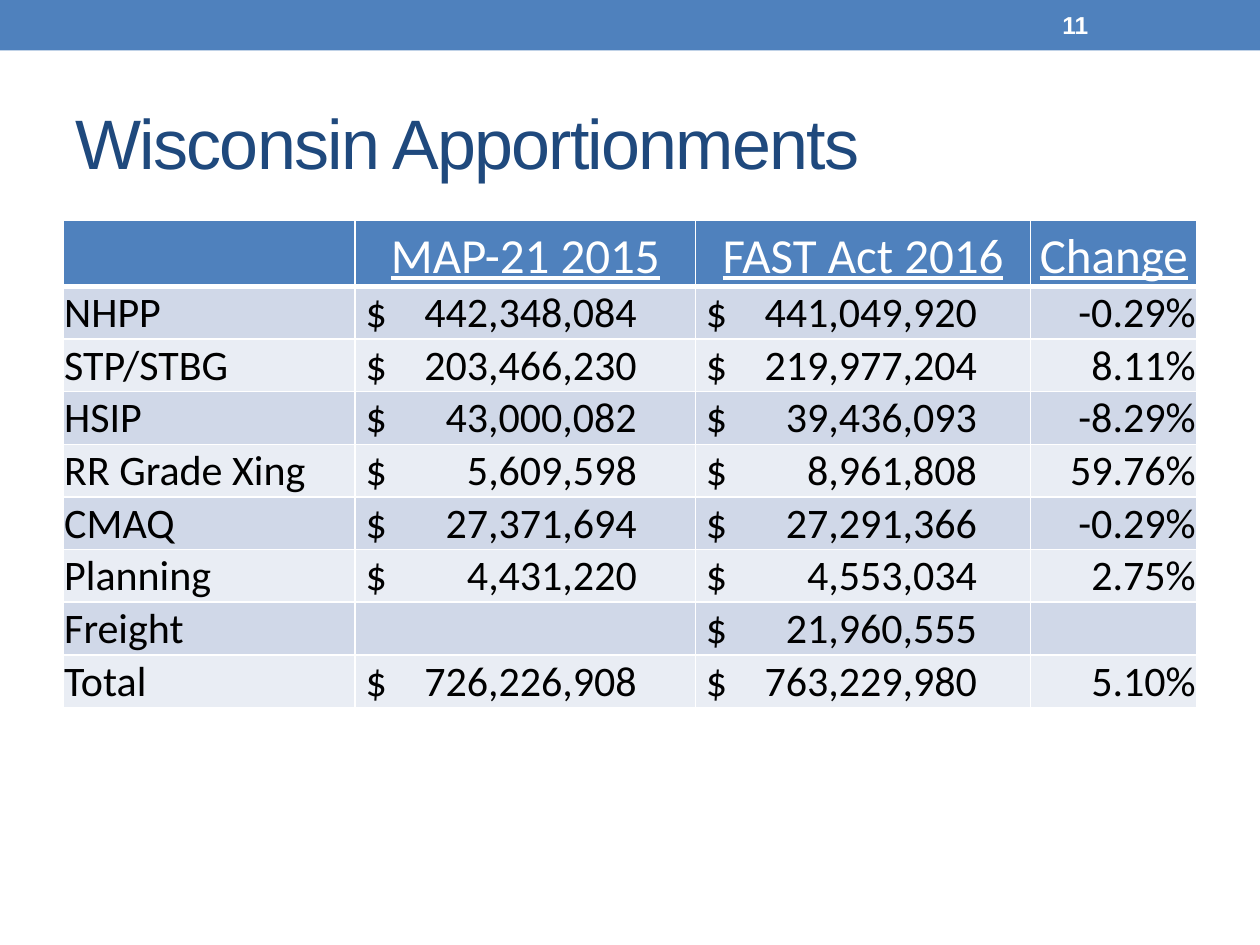
from lxml.etree import SubElement
from pptx import Presentation
from pptx.dml.color import RGBColor
from pptx.enum.shapes import MSO_SHAPE
from pptx.enum.text import MSO_ANCHOR, PP_ALIGN
from pptx.oxml.ns import qn
from pptx.util import Pt

BLUE = RGBColor(0x4F, 0x81, 0xBD)
NAVY = RGBColor(0x1F, 0x49, 0x7D)
WHITE = RGBColor(0xFF, 0xFF, 0xFF)
BLACK = RGBColor(0, 0, 0)
BANDS = [RGBColor(0xE9, 0xED, 0xF4), RGBColor(0xD0, 0xD8, 0xE8)]

HEADINGS = ["", "MAP-21 2015", "FAST Act 2016", "Change"]
PROGRAMS = [
    ["NHPP", "442,348,084", "441,049,920", "-0.29%"],
    ["STP/STBG", "203,466,230", "219,977,204", "8.11%"],
    ["HSIP", "43,000,082", "39,436,093", "-8.29%"],
    ["RR Grade Xing", "5,609,598", "8,961,808", "59.76%"],
    ["CMAQ", "27,371,694", "27,291,366", "-0.29%"],
    ["Planning", "4,431,220", "4,553,034", "2.75%"],
    ["Freight", "", "21,960,555", ""],
    ["Total", "726,226,908", "763,229,980", "5.10%"],
]
COLUMN_WIDTHS = [167, 194.4, 191.6, 95]
HEADER_HEIGHT, ROW_HEIGHT = 37.7, 30.1
AMOUNT_INDENT, AMOUNT_TAB = 6, 155


def style_font(font, name, size, color, bold=False):
    font.name, font.size, font.bold = name, Pt(size), bold
    font.color.rgb = color


def add_label(slide, text, left, top, width, height):
    frame = slide.shapes.add_textbox(Pt(left), Pt(top), Pt(width), Pt(height)).text_frame
    frame.word_wrap = True
    frame.vertical_anchor = MSO_ANCHOR.MIDDLE
    paragraph = frame.paragraphs[0]
    paragraph.text = text
    return paragraph


def add_banner(slide, left, top, width, height):
    band = slide.shapes.add_shape(MSO_SHAPE.RECTANGLE, Pt(left), Pt(top), Pt(width), Pt(height))
    band.shadow.inherit = False
    band.fill.solid()
    band.fill.fore_color.rgb = BLUE
    band.line.fill.background()
    page_number = add_label(slide, "11", left + width - 120, top + 1.4, 84, height - 2.8)
    style_font(page_number.font, "Arial", 14, WHITE, True)


def add_title(slide, left, top, width, height):
    title = add_label(slide, "Wisconsin Apportionments", left, top, width, height)
    style_font(title.font, "Arial", 40, NAVY)
    title.runs[0].font.size = Pt(40)
    title.runs[0]._r.get_or_add_rPr().set("spc", "-100")


def add_borders(cell, row):
    properties = cell._tc.get_or_add_tcPr()
    for side in ("lnL", "lnR", "lnT", "lnB"):
        under_header = (row, side) in ((0, "lnB"), (1, "lnT"))
        width = Pt(3 if under_header else 1)
        border = SubElement(properties, qn(f"a:{side}"), w=str(width))
        fill = SubElement(border, qn("a:solidFill"))
        SubElement(fill, qn("a:srgbClr"), val=str(WHITE))


def add_amount_tab(paragraph):
    tabs = SubElement(paragraph._p.get_or_add_pPr(), qn("a:tabLst"))
    SubElement(tabs, qn("a:tab"), pos=str(Pt(AMOUNT_TAB)), algn="r")


def fill_cell(cell, text, row, column):
    is_header = row == 0
    is_amount = not is_header and column in (1, 2) and text
    add_borders(cell, row)
    cell.fill.solid()
    cell.fill.fore_color.rgb = BLUE if is_header else BANDS[row % 2]
    cell.vertical_anchor = MSO_ANCHOR.BOTTOM
    cell.margin_left = Pt(AMOUNT_INDENT if is_amount else 0.72)
    cell.margin_right = cell.margin_top = Pt(0.72)
    cell.margin_bottom = Pt(0)
    paragraph = cell.text_frame.paragraphs[0]
    if is_amount:
        add_amount_tab(paragraph)
        text = f"$\t{text}"
    elif is_header:
        paragraph.alignment = PP_ALIGN.CENTER
    elif column == 3:
        paragraph.alignment = PP_ALIGN.RIGHT
    paragraph.text = text
    style_font(paragraph.font, "Calibri", 28 if is_header else 24, WHITE if is_header else BLACK)
    paragraph.font.underline = is_header


def add_apportionments(slide, left, top):
    rows = [HEADINGS] + PROGRAMS
    height = HEADER_HEIGHT + ROW_HEIGHT * len(PROGRAMS)
    table = slide.shapes.add_table(
        len(rows), len(HEADINGS), Pt(left), Pt(top), Pt(sum(COLUMN_WIDTHS)), Pt(height)
    ).table
    table.first_row = table.horz_banding = False
    for column, width in zip(table.columns, COLUMN_WIDTHS):
        column.width = Pt(width)
    for row, values in enumerate(rows):
        table.rows[row].height = Pt(ROW_HEIGHT if row else HEADER_HEIGHT)
        for column, value in enumerate(values):
            fill_cell(table.cell(row, column), value, row, column)


def main():
    presentation = Presentation()
    presentation.slide_width, presentation.slide_height = Pt(720), Pt(540)
    slide = presentation.slides.add_slide(presentation.slide_layouts[6])
    add_banner(slide, 0, 0, 720, 28.8)
    add_title(slide, 36, 42, 648, 78)
    add_apportionments(slide, 36, 126)
    presentation.save("out.pptx")


if __name__ == "__main__":
    main()
